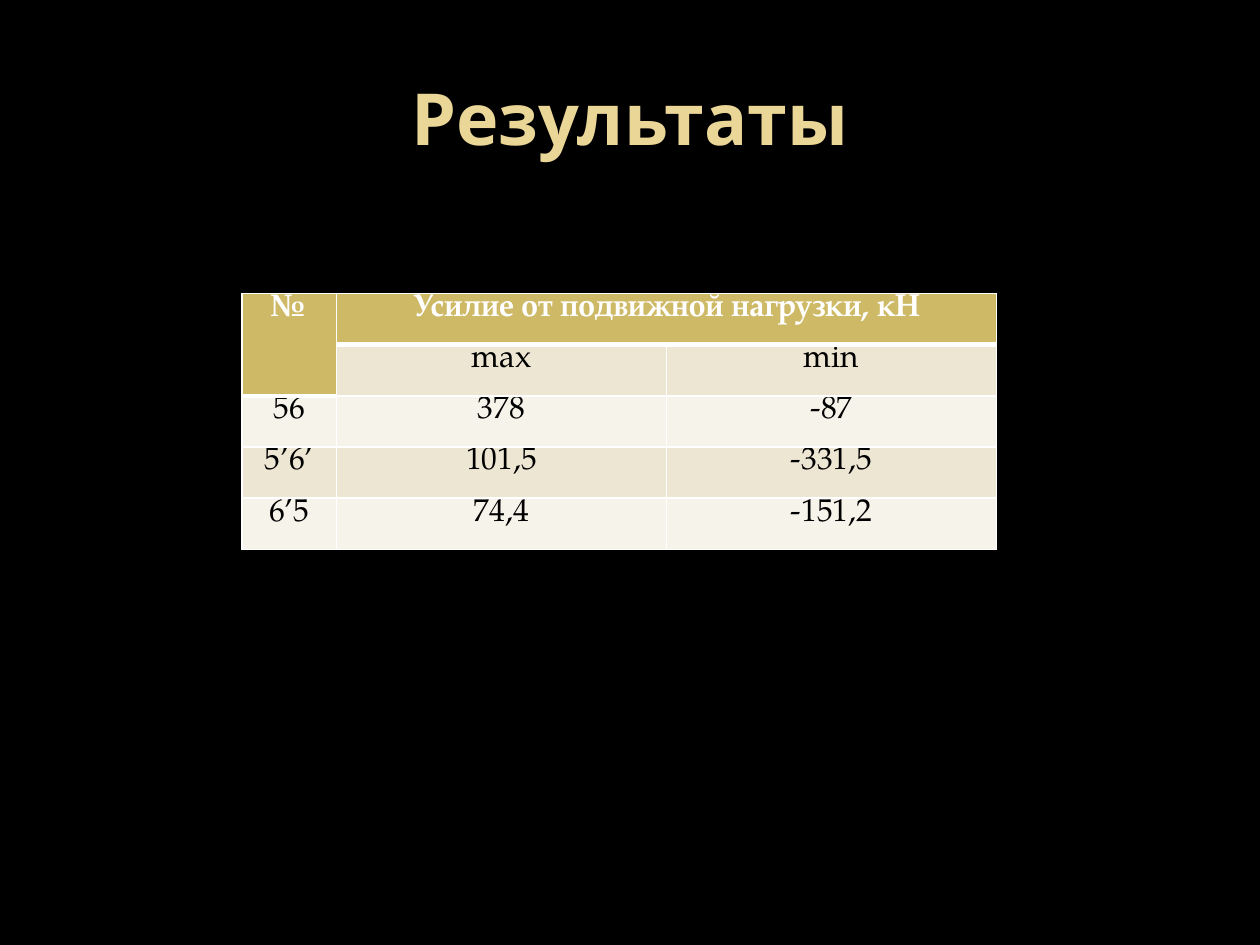
from pptx import Presentation
from pptx.dml.color import RGBColor
from pptx.enum.text import MSO_ANCHOR, PP_ALIGN
from pptx.oxml import parse_xml
from pptx.oxml.ns import nsdecls
from pptx.util import Inches, Pt

GOLD, SAND, CREAM = "CEB966", "EDE6D3", "F6F3EA"
WHITE, BLACK = "FFFFFF", "000000"


def paint(fill, color):
    fill.solid()
    fill.fore_color.rgb = RGBColor.from_string(color)


def write(frame, text, font="TeX Gyre Pagella", size=18, color=BLACK, bold=False):
    para = frame.paragraphs[0]
    para.alignment = PP_ALIGN.CENTER
    run = para.add_run()
    run.text = text
    run.font.name = font
    run.font.size = Pt(size)
    run.font.bold = bold
    paint(run.font.fill, color)


def edge(cell, top, bottom):
    props = cell._tc.get_or_add_tcPr()
    widths = {"L": 1, "R": 1, "T": top, "B": bottom}
    for spot, (side, width) in enumerate(widths.items()):
        line = parse_xml(
            f'<a:ln{side} {nsdecls("a")} w="{Pt(width)}"><a:solidFill>'
            f'<a:srgbClr val="{WHITE}"/></a:solidFill></a:ln{side}>'
        )
        props.insert(spot, line)


class Deck:
    def __init__(self, width, height, back):
        self.show = Presentation()
        self.show.slide_width = Inches(width)
        self.show.slide_height = Inches(height)
        self.slide = self.show.slides.add_slide(self.show.slide_layouts[6])
        paint(self.slide.background.fill, back)

    def title(self, text, *box):
        frame = self.slide.shapes.add_textbox(*map(Inches, box)).text_frame
        frame.word_wrap = True
        frame.vertical_anchor = MSO_ANCHOR.MIDDLE
        write(frame, text, font="Noto Sans", size=41, color="EAD696", bold=True)

    def table(self, rows, widths, left, top, height):
        box = map(Inches, (left, top, sum(widths), height))
        grid = self.slide.shapes.add_table(len(rows), len(widths), *box).table
        for col, width in zip(grid.columns, widths):
            col.width = Inches(width)
        for row in grid.rows:
            row.height = Inches(height / len(rows))
        grid.cell(0, 0).merge(grid.cell(1, 0))
        grid.cell(0, 1).merge(grid.cell(0, 2))
        for r, row in enumerate(rows):
            for c, text in enumerate(row):
                self.cell(grid.cell(r, c), text, r, 1 if c == 0 else 0)

    def cell(self, cell, text, row, last):
        head = row <= last
        cell.margin_top = cell.margin_bottom = 0
        paint(cell.fill, GOLD if head else SAND if row % 2 else CREAM)
        edge(cell, 3 if row == last + 1 else 1, 3 if row == last else 1)
        if text:
            write(cell.text_frame, text, color=WHITE if head else BLACK, bold=head)


def main():
    deck = Deck(10, 7.5, BLACK)
    deck.title("Результаты", 0.5, 0.3, 9, 1.25)
    rows = [
        ("№", "Усилие от подвижной нагрузки, кН", ""),
        ("", "max", "min"),
        ("56", "378", "-87"),
        ("5’6’", "101,5", "-331,5"),
        ("6’5", "74,4", "-151,2"),
    ]
    deck.table(rows, (0.75, 2.62, 2.62), 1.92, 2.33, 2.03)
    deck.show.save("out.pptx")


if __name__ == "__main__":
    main()
